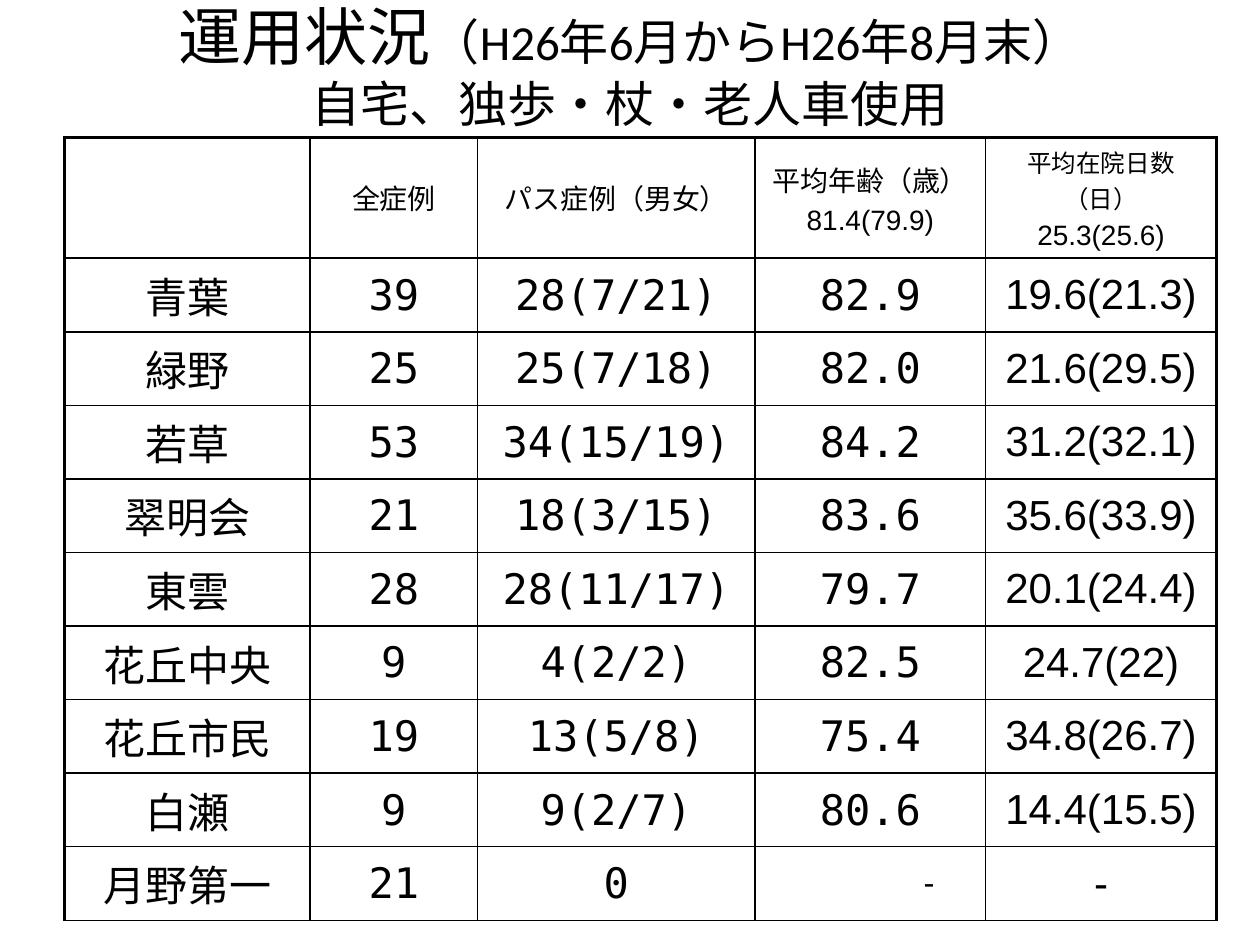
from dataclasses import dataclass

from lxml.etree import SubElement
from pptx import Presentation
from pptx.dml.color import RGBColor
from pptx.enum.text import MSO_ANCHOR as Anchor, MSO_AUTO_SIZE as AutoSize, PP_ALIGN as Align
from pptx.oxml.ns import qn
from pptx.util import Cm, Pt


@dataclass(frozen=True)
class Theme:
    ink: str = "000000"
    title_font: str = "Calibri"
    text_font: str = "Arial"
    number_font: str = "DejaVu Sans Mono"
    title_size: int = 36
    subtitle_size: int = 28
    body_size: int = 24
    dash_size: int = 18
    header_size: int = 16
    small_size: int = 14
    outer_line: float = 2.25
    inner_line: float = 1


HEADERS = [
    [],
    ["全症例"],
    ["パス症例（男女）"],
    ["平均年齢（歳）", "81.4(79.9)"],
    ["平均在院日数（日）", "25.3(25.6)"],
]
HOSPITALS = [
    ["青葉", "39", "28(7/21)", "82.9", "19.6(21.3)"],
    ["緑野", "25", "25(7/18)", "82.0", "21.6(29.5)"],
    ["若草", "53", "34(15/19)", "84.2", "31.2(32.1)"],
    ["翠明会", "21", "18(3/15)", "83.6", "35.6(33.9)"],
    ["東雲", "28", "28(11/17)", "79.7", "20.1(24.4)"],
    ["花丘中央", "9", "4(2/2)", "82.5", "24.7(22)"],
    ["花丘市民", "19", "13(5/8)", "75.4", "34.8(26.7)"],
    ["白瀬", "9", "9(2/7)", "80.6", "14.4(15.5)"],
    ["月野第一", "21", "0", "-", "-"],
]
COLUMN_WIDTHS = [4.95, 3.38, 5.59, 4.65, 4.65]
HEADER_HEIGHT = 1.17
ROW_HEIGHT = 1.44


class SlideBuilder:
    def __init__(self, slide, theme):
        self.slide = slide
        self.theme = theme

    def style(self, paragraph, size, font, align=Align.CENTER):
        paragraph.alignment = align
        paragraph.font.size = Pt(size)
        paragraph.font.name = font
        paragraph.font.color.rgb = RGBColor.from_string(self.theme.ink)

    def title(self, heading, period, subject):
        shape = self.slide.shapes.title
        shape.left, shape.top = Cm(1.27), Cm(-0.28)
        shape.width, shape.height = Cm(22.86), Cm(3.18)
        frame = shape.text_frame
        frame.auto_size = AutoSize.NONE
        frame.vertical_anchor = Anchor.MIDDLE
        paragraph = frame.paragraphs[0]
        self.style(paragraph, self.theme.subtitle_size, self.theme.title_font)
        run = paragraph.add_run()
        run.text = heading
        run.font.size = Pt(self.theme.title_size)
        paragraph.add_run().text = period
        paragraph.add_line_break()
        paragraph.add_run().text = subject

    def borders(self, cell, widths):
        properties = cell._tc.get_or_add_tcPr()
        for side, width in zip("LRTB", widths):
            line = SubElement(properties, qn(f"a:ln{side}"), w=str(Pt(width)))
            fill = SubElement(line, qn("a:solidFill"))
            SubElement(fill, qn("a:srgbClr"), val=self.theme.ink)

    def text(self, cell, lines, sizes, font):
        frame = cell.text_frame
        for index, (line, size) in enumerate(zip(lines, sizes)):
            paragraph = frame.add_paragraph() if index else frame.paragraphs[0]
            paragraph.text = line
            self.style(paragraph, size, font)
            paragraph.space_before = Pt(size * 0.2)

    def number(self, cell, value):
        cell.margin_left = cell.margin_right = cell.margin_top = Cm(0.02)
        cell.margin_bottom = 0
        paragraph = cell.text_frame.paragraphs[0]
        paragraph.text = value
        if value == "-":
            self.style(paragraph, self.theme.dash_size, self.theme.number_font, Align.RIGHT)
            cell.margin_right = Cm(0.95)
        else:
            self.style(paragraph, self.theme.body_size, self.theme.number_font)

    def table(self, headers, records):
        theme = self.theme
        row_count, column_count = len(records) + 1, len(headers)
        last_column = column_count - 1
        height = HEADER_HEIGHT + ROW_HEIGHT * len(records)
        table = self.slide.shapes.add_table(
            row_count, column_count, Cm(1.3), Cm(2.77), Cm(sum(COLUMN_WIDTHS)), Cm(height)
        ).table
        table.first_row = table.horz_banding = False
        for column, width in zip(table.columns, COLUMN_WIDTHS):
            column.width = Cm(width)
        for index, row in enumerate(table.rows):
            row.height = Cm(ROW_HEIGHT if index else HEADER_HEIGHT)
            for position, cell in enumerate(row.cells):
                edges = (position == 0, position == last_column, index == 0, False)
                self.borders(cell, [theme.outer_line if edge else theme.inner_line for edge in edges])
                cell.fill.background()
                cell.vertical_anchor = Anchor.MIDDLE
                if index == 0:
                    first_size = theme.small_size if position == last_column else theme.header_size
                    self.text(cell, headers[position], [first_size, theme.header_size], theme.text_font)
                elif position in (0, last_column):
                    self.text(cell, [records[index - 1][position]], [theme.body_size], theme.text_font)
                else:
                    self.number(cell, records[index - 1][position])


def main():
    presentation = Presentation()
    presentation.slide_width, presentation.slide_height = Cm(25.4), Cm(19.05)
    slide = presentation.slides.add_slide(presentation.slide_layouts[5])
    builder = SlideBuilder(slide, Theme())
    builder.title("運用状況", "（H26年6月からH26年8月末）", "自宅、独歩・杖・老人車使用")
    builder.table(HEADERS, HOSPITALS)
    presentation.save("out.pptx")


if __name__ == "__main__":
    main()
